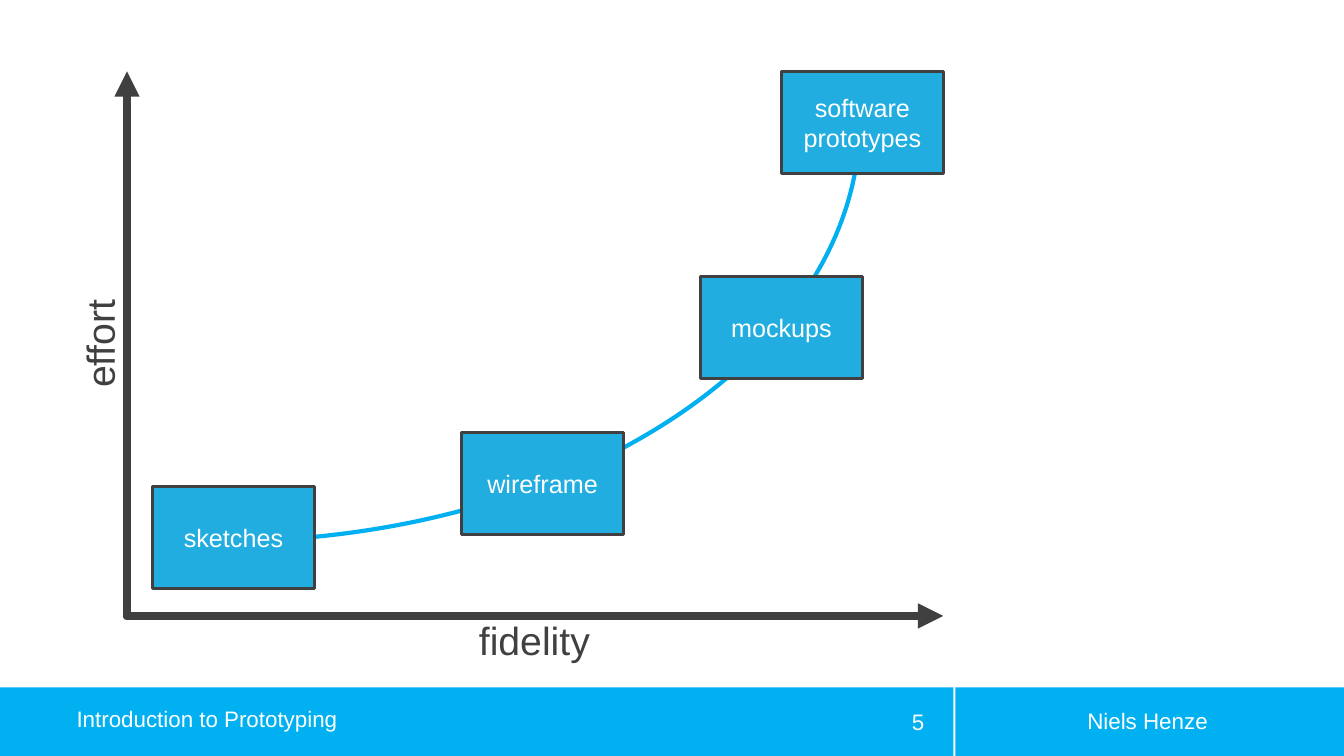
import pptx
import pptx.util
import pptx.dml.color
import pptx.enum.shapes
import pptx.enum.text
import pptx.oxml.ns
import lxml.etree

Cm = pptx.util.Cm
Pt = pptx.util.Pt
KIND = pptx.enum.shapes.MSO_SHAPE
ALIGN = pptx.enum.text.PP_ALIGN
MID = pptx.enum.text.MSO_ANCHOR.MIDDLE
qn = pptx.oxml.ns.qn
HUES = {"sky": "00B0F0", "box": "21ADDF", "dark": "404040", "white": "FFFFFF"}


def hue(name):
    return pptx.dml.color.RGBColor.from_string(HUES[name])


def write(shape, text, size, color, align, inset=True):
    """Fill a shape with text in one style, with or without inner margins."""
    frame = shape.text_frame
    frame.text = text
    frame.vertical_anchor = MID
    if not inset:
        frame.margin_left = frame.margin_right = 0
        frame.margin_top = frame.margin_bottom = 0
    for para in frame.paragraphs:
        para.alignment = align
        para.font.name = "Arial"
        para.font.size = Pt(size)
        para.font.color.rgb = hue(color)
    return frame


deck = pptx.Presentation()
deck.slide_width = Cm(33.87)
deck.slide_height = Cm(19.05)
slide = deck.slides.add_slide(deck.slide_layouts[6])
shapes = slide.shapes

# Footer
for left, width in [(24.08, 9.79), (0, 24.03)]:
    bar = shapes.add_shape(KIND.RECTANGLE, Cm(left), Cm(17.32), Cm(width), Cm(1.73))
    bar.shadow.inherit = False
    bar.fill.solid()
    bar.fill.fore_color.rgb = hue("sky")
    bar.line.fill.background()

for text, left, top, width, align, inset in [
    ("Niels Henze", 24.41, 17.65, 9.02, ALIGN.CENTER, True),
    ("5", 21.36, 17.68, 2.18, ALIGN.RIGHT, True),
    ("Introduction to Prototyping", 1.93, 17.65, 15.6, ALIGN.LEFT, False),
]:
    note = shapes.add_textbox(Cm(left), Cm(top), Cm(width), Cm(1.02))
    frame = write(note, text, 16, "white", align, inset)
    frame.word_wrap = True
    if not inset:
        frame.paragraphs[0].line_spacing = 0.9

# Axes, both starting at the origin
for right, top in [(23.77, 15.52), (3.2, 1.8)]:
    axis = shapes.add_connector(
        pptx.enum.shapes.MSO_CONNECTOR.STRAIGHT,
        Cm(3.2), Cm(15.52), Cm(right), Cm(top))
    axis.line.width = Pt(6)
    axis.line.color.rgb = hue("dark")
    line = axis.line._get_or_add_ln()
    line.set("cap", "rnd")
    lxml.etree.SubElement(line, qn("a:round"))
    lxml.etree.SubElement(line, qn("a:tailEnd"), type="triangle")
    lxml.etree.SubElement(axis._element.spPr, qn("a:effectLst"))

for text, left, top, width, turn in [
    ("effort", 1.37, 8.05, 2.26, 270),
    ("fidelity", 12.07, 15.52, 2.82, 0),
]:
    label = shapes.add_textbox(Cm(left), Cm(top), Cm(width), Cm(1.19))
    label.rotation = turn
    frame = write(label, text, 28, "dark", ALIGN.LEFT, False)
    frame.word_wrap = False
    frame.auto_size = pptx.enum.text.MSO_AUTO_SIZE.SHAPE_TO_FIT_TEXT

# Rising curve behind the boxes
curve = shapes.add_shape(KIND.ARC, Cm(-10.44), Cm(-7.54), Cm(32.11), Cm(21.18))
curve.shadow.inherit = False
curve.fill.background()
curve.line.width = Pt(3)
curve.line.color.rgb = hue("sky")
curve._element.spPr.find(qn("a:xfrm")).set("flipV", "1")

# Kinds of prototype
for text, left, top in [
    ("sketches", 3.84, 12.27),
    ("wireframe", 11.63, 10.9),
    ("mockups", 17.65, 6.96),
    ("software\nprototypes", 19.69, 1.8),
]:
    box = shapes.add_shape(KIND.RECTANGLE, Cm(left), Cm(top), Cm(4.09), Cm(2.57))
    box.shadow.inherit = False
    box.fill.solid()
    box.fill.fore_color.rgb = hue("box")
    box.line.width = Pt(2.25)
    box.line.color.rgb = hue("dark")
    write(box, text, 18, "white", ALIGN.CENTER)

deck.save("out.pptx")
